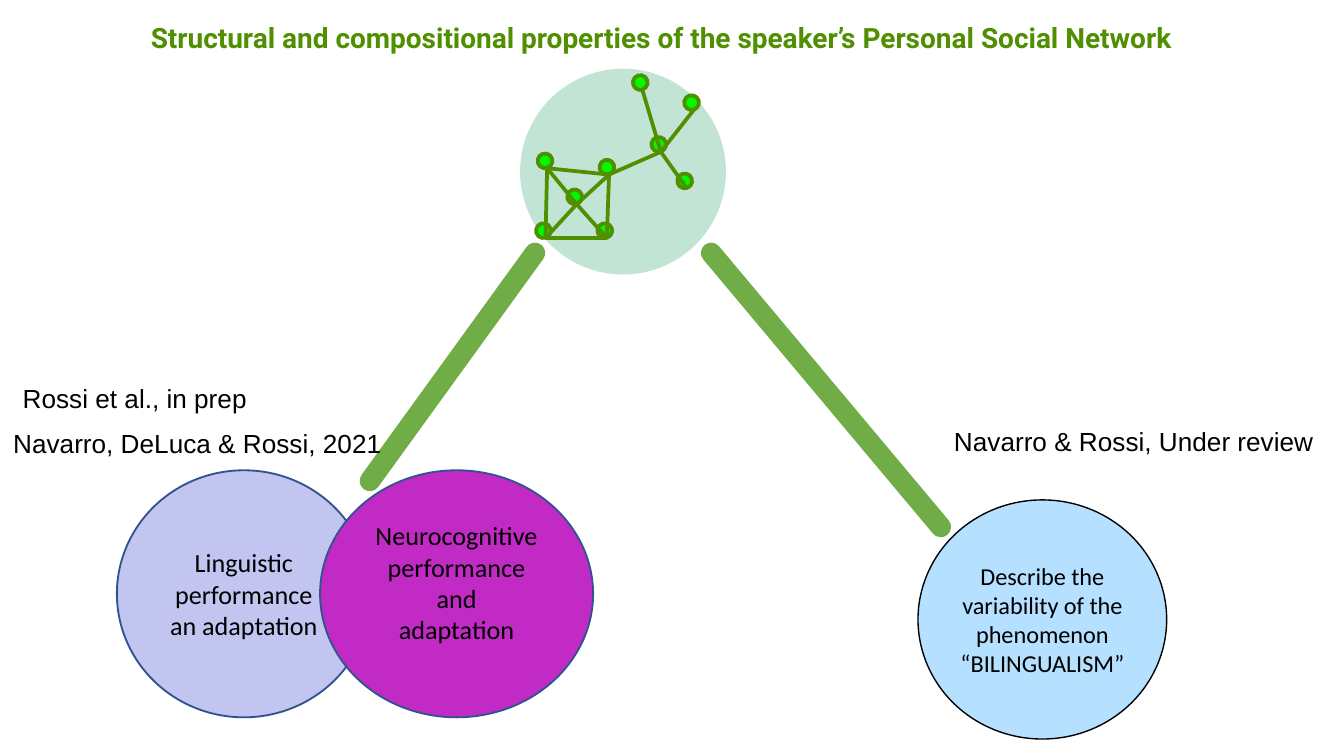
"""Build the slide on personal social networks and their outcomes."""
from dataclasses import dataclass

from pptx import Presentation
from pptx.dml.color import RGBColor
from pptx.enum.shapes import MSO_CONNECTOR, MSO_SHAPE
from pptx.enum.text import MSO_ANCHOR, MSO_AUTO_SIZE, PP_ALIGN
from pptx.oxml.ns import qn
from pptx.oxml.xmlchemy import OxmlElement
from pptx.util import Cm, Pt

OVAL = MSO_SHAPE.OVAL
LINE = MSO_CONNECTOR.STRAIGHT
LEFT, MID = PP_ALIGN.LEFT, PP_ALIGN.CENTER
TOP, CENTER = MSO_ANCHOR.TOP, MSO_ANCHOR.MIDDLE
GREEN = "4F8F00"
DOT = 0.28
SHIFT = (0.04, 0.14)


@dataclass
class Box:
    """Place and size in centimetres."""
    left: float
    top: float
    width: float
    height: float

    def spans(self) -> list:
        """Return the four lengths."""
        return [Cm(v) for v in (self.left, self.top, self.width, self.height)]


@dataclass
class Topic:
    """An oval that holds a theme."""
    text: str
    box: Box
    fill: str
    alpha: int
    edge: str
    weight: float
    size: int
    pads: tuple


@dataclass
class Label:
    """A source note."""
    text: str
    box: Box


NODES = {
    "far": (13.07, 1.94), "sw": (10.27, 4.36), "hub": (12.45, 2.73),
    "low": (12.94, 3.42), "ne": (11.47, 3.16), "top": (12.1, 1.56),
    "se": (11.43, 4.36), "mid": (10.86, 3.72), "nw": (10.3, 3.04),
}
LINKS = [
    ("mid", "sw"), ("low", "hub"), ("hub", "top"), ("nw", "sw"),
    ("sw", "se"), ("se", "ne"), ("nw", "ne"), ("hub", "far"),
    ("hub", "ne"), ("se", "mid"), ("ne", "mid"), ("nw", "mid"),
]
ARMS = [((6.99, 9.09), (10.11, 4.78)), ((17.78, 9.96), (13.44, 4.78))]
TOPICS = [
    Topic("Linguistic performance an adaptation", Box(2.21, 8.89, 4.8, 4.67),
          "535BD3", 35, "31538F", 1, 14, (0.25, 0.13, 0.25, 0.13)),
    Topic("Neurocognitive performance and\vadaptation", Box(6.05, 8.89, 5.16, 4.67),
          "C12AC4", 100, "31538F", 1, 14, (0.25, 0.13, 0.25, 0.56)),
    Topic("Describe the variability of the phenomenon “BILINGUALISM”",
          Box(17.35, 9.45, 4.7, 4.52),
          "0096FF", 29, "000000", 0.75, 13, (0.08, 0.08, 0.08, 0.08)),
]
LABELS = [
    Label("Navarro & Rossi, Under review", Box(17.78, 7.92, 7.34, 0.86)),
    Label("Navarro, DeLuca & Rossi, 2021", Box(0, 7.95, 7.65, 0.86)),
    Label("Rossi et al., in prep", Box(0.18, 7.09, 4.78, 0.86)),
]


def tint(color, value: str) -> None:
    """Set a colour from a hex string."""
    color.rgb = RGBColor.from_string(value)


def write(shape, text: str, *, font: str = "Arial", size: float = 14,
          color: str = "000000", bold: bool = False, align=LEFT, anchor=TOP,
          wrap: bool = True, pads: tuple = (0.25, 0.13, 0.25, 0.13)) -> None:
    """Put formatted text in a shape."""
    frame = shape.text_frame
    frame.text = text
    frame.word_wrap = wrap
    frame.auto_size = MSO_AUTO_SIZE.NONE
    frame.vertical_anchor = anchor
    (frame.margin_left, frame.margin_top,
     frame.margin_right, frame.margin_bottom) = [Cm(p) for p in pads]
    para = frame.paragraphs[0]
    para.alignment = align
    for run in para.runs:
        run.font.name, run.font.size, run.font.bold = font, Pt(size), bold
        tint(run.font.color, color)


def oval(shapes, box: Box, fill: str, alpha: int = 100,
         edge: str = "", weight: float = 1):
    """Draw an ellipse, with an edge if one is named."""
    shape = shapes.add_shape(OVAL, *box.spans())
    shape.shadow.inherit = False
    shape.fill.solid()
    tint(shape.fill.fore_color, fill)
    if alpha < 100:
        mark = OxmlElement("a:alpha")
        mark.set("val", str(alpha * 1000))
        shape.element.spPr.find(qn("a:solidFill"))[0].append(mark)
    if edge:
        tint(shape.line.color, edge)
        shape.line.width = Pt(weight)
    else:
        shape.line.fill.background()
    return shape


def link(shapes, start: tuple, end: tuple, color: str, weight: float,
         cap: str = "flat") -> None:
    """Draw a straight line between two points."""
    line = shapes.add_connector(LINE, *[Cm(v) for v in (*start, *end)])
    tint(line.line.color, color)
    line.line.width = Pt(weight)
    props = line.element.spPr
    props.find(qn("a:ln")).set("cap", cap)
    props.append(OxmlElement("a:effectLst"))


def graph(shapes) -> None:
    """Draw the network as one group."""
    group = shapes.add_group_shape().shapes
    for x, y in NODES.values():
        box = Box(x - DOT / 2, y - DOT / 2, DOT, DOT)
        oval(group, box, "00F900", edge=GREEN, weight=2).rotation = 162
    tips = {name: (x + SHIFT[0], y + SHIFT[1]) for name, (x, y) in NODES.items()}
    for start, end in LINKS:
        link(group, tips[start], tips[end], GREEN, 2)


def main() -> None:
    """Build and save the deck."""
    deck = Presentation()
    deck.slide_width, deck.slide_height = Cm(25.4), Cm(14.29)
    slide = deck.slides.add_slide(deck.slide_layouts[5])
    shapes = slide.shapes
    title = shapes.title
    title.left, title.top, title.width, title.height = Box(2.77, 0.3, 21.31, 1.07).spans()
    write(title, "Structural and compositional properties of the speaker’s "
          "Personal Social Network", font="Roboto", size=15, color=GREEN,
          bold=True, pads=(0.08,) * 4)
    oval(shapes, Box(9.83, 1.3, 3.89, 3.89), "009051", 24)
    graph(shapes)
    for start, end in ARMS:
        link(shapes, start, end, "70AD47", 11, "rnd")
    for t in TOPICS:
        shape = oval(shapes, t.box, t.fill, t.alpha, t.edge, t.weight)
        write(shape, t.text, font="Calibri", size=t.size, align=MID,
              anchor=CENTER, pads=t.pads)
    for label in LABELS:
        write(shapes.add_textbox(*label.box.spans()), label.text, wrap=False)
    deck.save("out.pptx")


if __name__ == "__main__":
    main()
